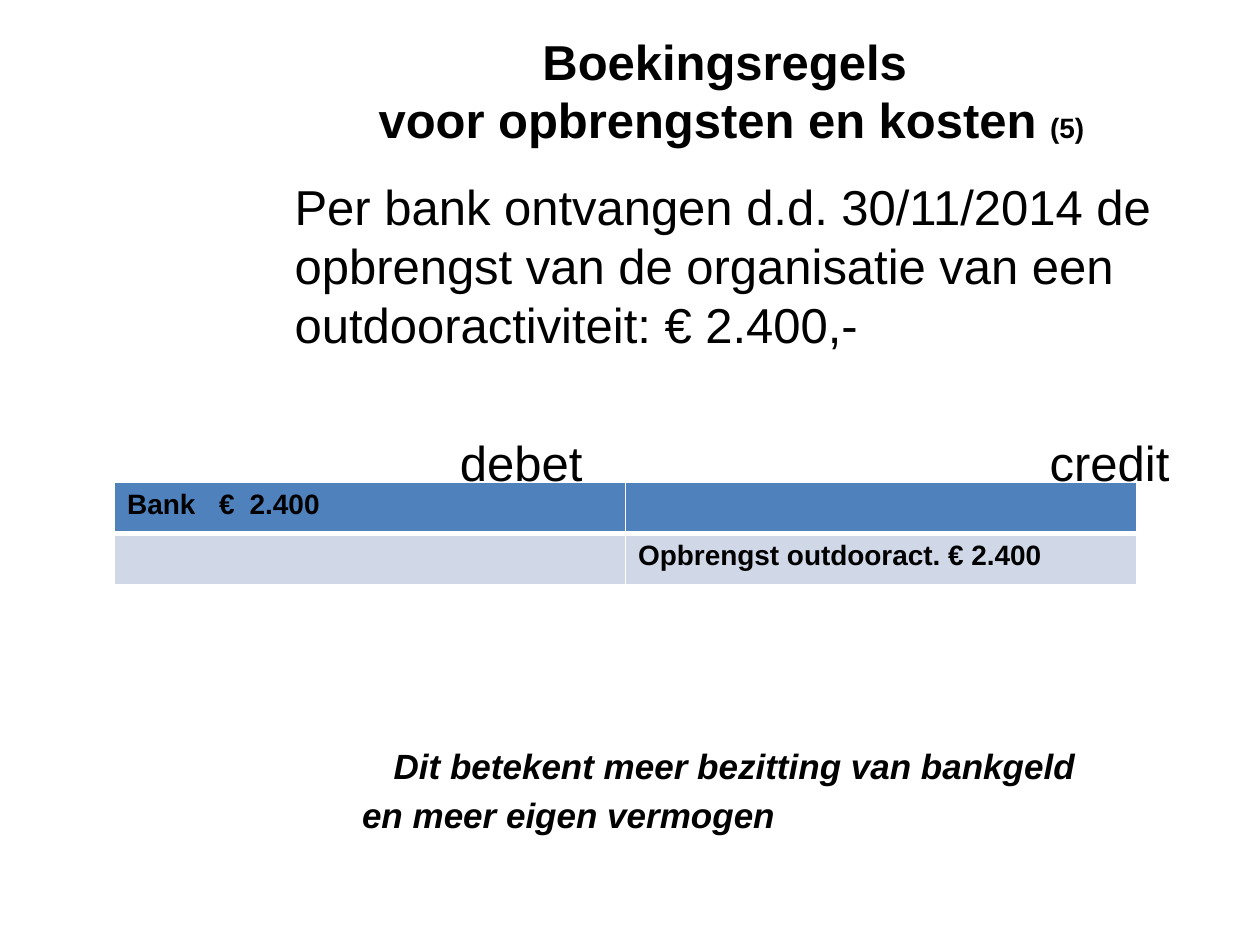
from lxml.etree import SubElement
from pptx import Presentation
from pptx.dml.color import RGBColor
from pptx.enum.text import MSO_ANCHOR, PP_ALIGN
from pptx.oxml.ns import qn
from pptx.util import Pt

BLACK, WHITE, BLUE, PALE = "000000", "FFFFFF", "4F81BD", "D0D8E8"


def rgb(color):
    return RGBColor.from_string(color)


def set_font(font, **values):
    font.color.rgb = rgb(BLACK)
    for name, value in {"name": "Arial", **values}.items():
        setattr(font, name, value)


def add_run(p, text, size, **style):
    r = p.add_run()
    r.text = text
    set_font(r.font, size=Pt(size), **style)


def set_tabs(p, *stops):
    """Put left tab stops, in points from the text edge, on a paragraph."""
    tabs = SubElement(p._p.get_or_add_pPr(), qn("a:tabLst"))
    for stop in stops:
        SubElement(tabs, qn("a:tab"), pos=str(Pt(stop)), algn="l")


def add_box(s, left, top, width, height, anchor=MSO_ANCHOR.TOP):
    tf = s.shapes.add_textbox(Pt(left), Pt(top), Pt(width), Pt(height)).text_frame
    tf.word_wrap = True
    tf.vertical_anchor = anchor
    return tf


def add_paragraph(tf, before, align=PP_ALIGN.LEFT):
    p = tf.add_paragraph()
    p.space_before = Pt(before)
    p.alignment = align
    return p


def add_title(s):
    p = add_box(s, 156.25, 25.9, 523.5, 51, MSO_ANCHOR.MIDDLE).paragraphs[0]
    p.alignment = PP_ALIGN.CENTER
    add_run(p, "Boekingsregels ", 28, bold=True)
    p.add_line_break()
    add_run(p, "voor opbrengsten en kosten ", 28, bold=True)
    add_run(p, "(5)", 16, bold=True)


def add_body(s):
    tf = add_box(s, 161.3, 97.5, 522.7, 385)
    add_run(tf.paragraphs[0], "Per bank ontvangen d.d. 30/11/2014 de opbrengst van de "
            "organisatie van een outdooractiviteit: € 2.400,-", 28)

    sides = add_paragraph(tf, 45.5)
    set_tabs(sides, 94.5, 431.5)
    add_run(sides, "\tdebet\tcredit", 28)

    for text, before in (("Dit betekent meer bezitting van bankgeld ", 144.5),
                         ("en meer eigen vermogen\t", 4)):
        p = add_paragraph(tf, before, PP_ALIGN.CENTER)
        add_run(p, text, 20, bold=True, italic=True)


def set_borders(cell, **widths):
    """Draw white borders; fills come after lines, so call before filling."""
    tcPr = cell._tc.get_or_add_tcPr()
    for side in ("lnL", "lnR", "lnT", "lnB"):
        ln = SubElement(tcPr, qn(f"a:{side}"), w=str(Pt(widths.get(side, 1))))
        SubElement(SubElement(ln, qn("a:solidFill")), qn("a:srgbClr"), val=WHITE)


def add_journal(s):
    rows = ((("Bank\t€\t2.400", ""), BLUE, {"lnB": 3}),
            (("", "Opbrengst outdooract. € 2.400"), PALE, {"lnT": 3}))
    table = s.shapes.add_table(2, 2, Pt(65.5), Pt(275.8), Pt(584), Pt(58.4)).table
    for i, (texts, fill, borders) in enumerate(rows):
        for j, text in enumerate(texts):
            cell = table.cell(i, j)
            set_borders(cell, **borders)
            cell.fill.solid()
            cell.fill.fore_color.rgb = rgb(fill)
            p = cell.text_frame.paragraphs[0]
            if "\t" in text:
                set_tabs(p, 52.5, 70)
            if text:
                add_run(p, text, 16, bold=True)


def main():
    prs = Presentation()
    prs.slide_width, prs.slide_height = Pt(720), Pt(540)
    s = prs.slides.add_slide(prs.slide_layouts[6])
    add_title(s)
    add_body(s)
    add_journal(s)
    prs.save("out.pptx")


if __name__ == "__main__":
    main()
